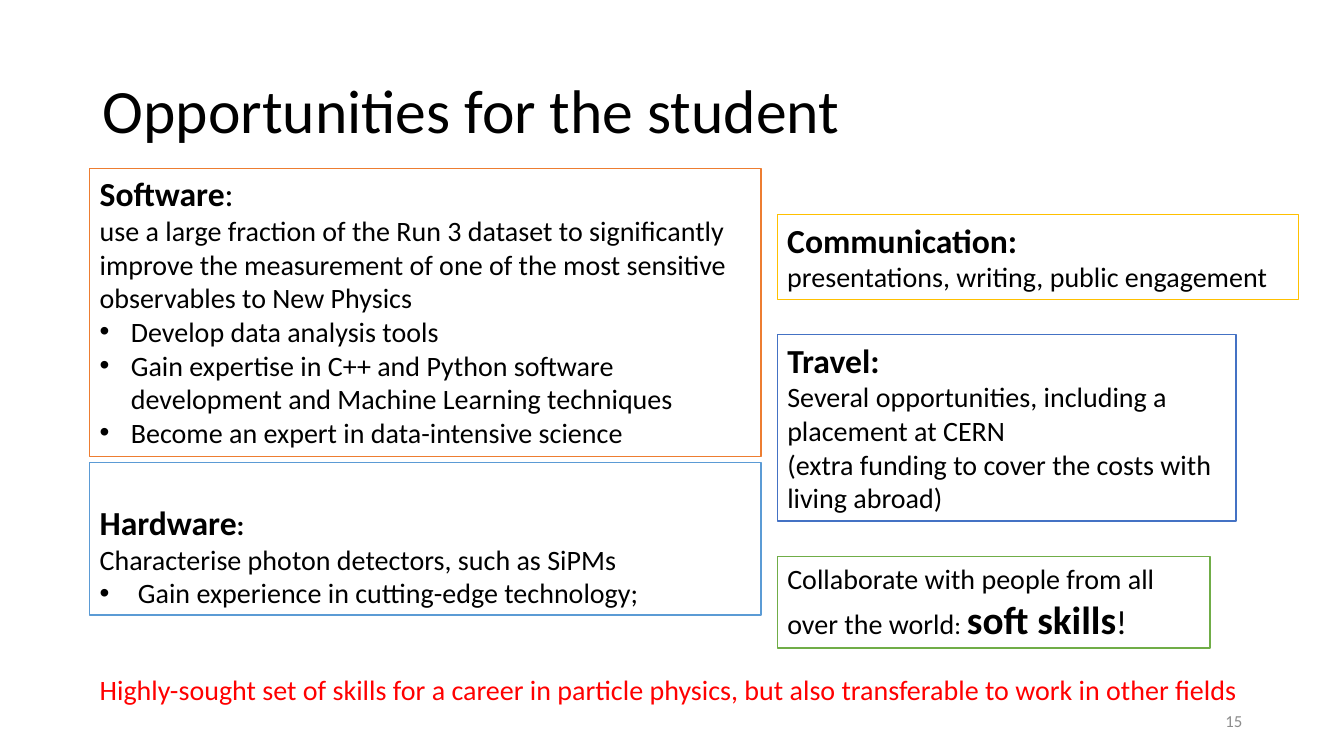
from lxml import etree
from pptx import Presentation, util as u
from pptx.dml.color import RGBColor
from pptx.enum import shapes, text
from pptx.oxml.ns import qn

COLORS = {
    "text": "000000", "paper": "FFFFFF", "number": "8C8C8C", "closing": "FF0000",
    "software": "ED7D31", "hardware": "5B9BD5", "communication": "FFC000",
    "travel": "4472C4", "collaboration": "70AD47",
}
HEADING, BODY = 24, 20
LEFT, RIGHT = 0.89, 7.71


class SlideBuilder:
    font = "Calibri"

    def __init__(self, slide):
        self.slide = slide

    def color(self, name):
        return RGBColor.from_string(COLORS[name])

    def place(self, shape, left, top, width, height):
        shape.left, shape.top = u.Inches(left), u.Inches(top)
        shape.width, shape.height = u.Inches(width), u.Inches(height)

    def add_runs(self, paragraph, runs, color="text", align=text.PP_ALIGN.LEFT):
        paragraph.alignment = align
        for content, size, bold in runs:
            run = paragraph.add_run()
            run.text = content
            run.font.name = self.font
            run.font.size = u.Pt(size)
            run.font.bold = bold
            run.font.color.rgb = self.color(color)

    def bullet(self, paragraph, indent):
        properties = paragraph._p.get_or_add_pPr()
        properties.set("marL", str(u.Inches(indent)))
        properties.set("indent", str(-u.Inches(indent)))
        font = etree.SubElement(properties, qn("a:buFont"))
        font.set("typeface", "Arial")
        character = etree.SubElement(properties, qn("a:buChar"))
        character.set("char", "•")

    def title(self, content, *box):
        shape = self.slide.shapes.title
        self.place(shape, *box)
        frame = shape.text_frame
        frame.auto_size = text.MSO_AUTO_SIZE.NONE
        frame.vertical_anchor = text.MSO_ANCHOR.MIDDLE
        paragraph = frame.paragraphs[0]
        paragraph.line_spacing = 0.9
        self.add_runs(paragraph, [(content, 44, False)])

    def label(self, content, size, color, box, align=text.PP_ALIGN.LEFT,
              anchor=text.MSO_ANCHOR.TOP):
        shape = self.slide.shapes.add_textbox(*map(u.Inches, box))
        frame = shape.text_frame
        frame.word_wrap = True
        frame.vertical_anchor = anchor
        self.add_runs(frame.paragraphs[0], [(content, size, False)], color, align)

    def panel(self, border, box, paragraphs, bullets=(), indent=0.31, top_margin=0.05):
        shape = self.slide.shapes.add_shape(
            shapes.MSO_SHAPE.RECTANGLE, *map(u.Inches, box))
        shape.shadow.inherit = False
        shape.fill.solid()
        shape.fill.fore_color.rgb = self.color("paper")
        shape.line.color.rgb = self.color(border)
        shape.line.width = u.Pt(1)
        frame = shape.text_frame
        frame.word_wrap = True
        frame.vertical_anchor = text.MSO_ANCHOR.TOP
        frame.margin_top = u.Inches(top_margin)
        items = paragraphs + [[(item, BODY, False)] for item in bullets]
        for index, runs in enumerate(items):
            paragraph = frame.add_paragraph() if index else frame.paragraphs[0]
            self.add_runs(paragraph, runs)
            if index >= len(paragraphs):
                self.bullet(paragraph, indent)


def main():
    presentation = Presentation()
    presentation.slide_width = u.Inches(13.33)
    presentation.slide_height = u.Inches(7.5)
    builder = SlideBuilder(presentation.slides.add_slide(presentation.slide_layouts[5]))

    builder.title("Opportunities for the student", 0.92, 0.4, 11.5, 1.45)
    builder.label("15", 12, "number", (9.42, 6.95, 3, 0.4),
                  text.PP_ALIGN.RIGHT, text.MSO_ANCHOR.MIDDLE)

    builder.panel(
        "software", (LEFT, 1.67, 6.66, 2.86),
        [[("Software", HEADING, True), (":", HEADING, False)],
         [("use a large fraction of the Run 3 dataset to significantly improve the "
           "measurement of one of the most sensitive observables to New Physics",
           BODY, False)]],
        ["Develop data analysis tools",
         "Gain expertise in C++ and Python software development and "
         "Machine Learning techniques",
         "Become an expert in data-intensive science"])
    builder.panel(
        "hardware", (LEFT, 4.59, 6.66, 1.51),
        [[("Hardware", HEADING, True), (":", BODY, True)],
         [("Characterise photon detectors, such as SiPMs", BODY, False)]],
        ["Gain experience in cutting-edge technology;"],
        indent=0.38, top_margin=0.39)
    builder.panel(
        "communication", (RIGHT, 2.13, 5.17, 0.84),
        [[("Communication:", HEADING, True)],
         [("presentations, writing, public engagement", BODY, False)]])
    builder.panel(
        "travel", (RIGHT, 3.32, 4.55, 1.85),
        [[("Travel:", HEADING, True)],
         [("Several opportunities, including a placement at CERN", BODY, False)],
         [("(extra funding to cover the costs with living abroad)", BODY, False)]])
    builder.panel(
        "collaboration", (RIGHT, 5.52, 4.29, 0.91),
        [[("Collaborate with people from all over the world", BODY, False),
          (": ", 18, False), ("soft skills", 28, True), ("!", HEADING, False)]])

    builder.label(
        "Highly-sought set of skills for a career in particle physics, "
        "but also transferable to work in other fields",
        BODY, "closing", (LEFT, 6.62, 11.53, 0.44))
    presentation.save("out.pptx")


if __name__ == "__main__":
    main()
